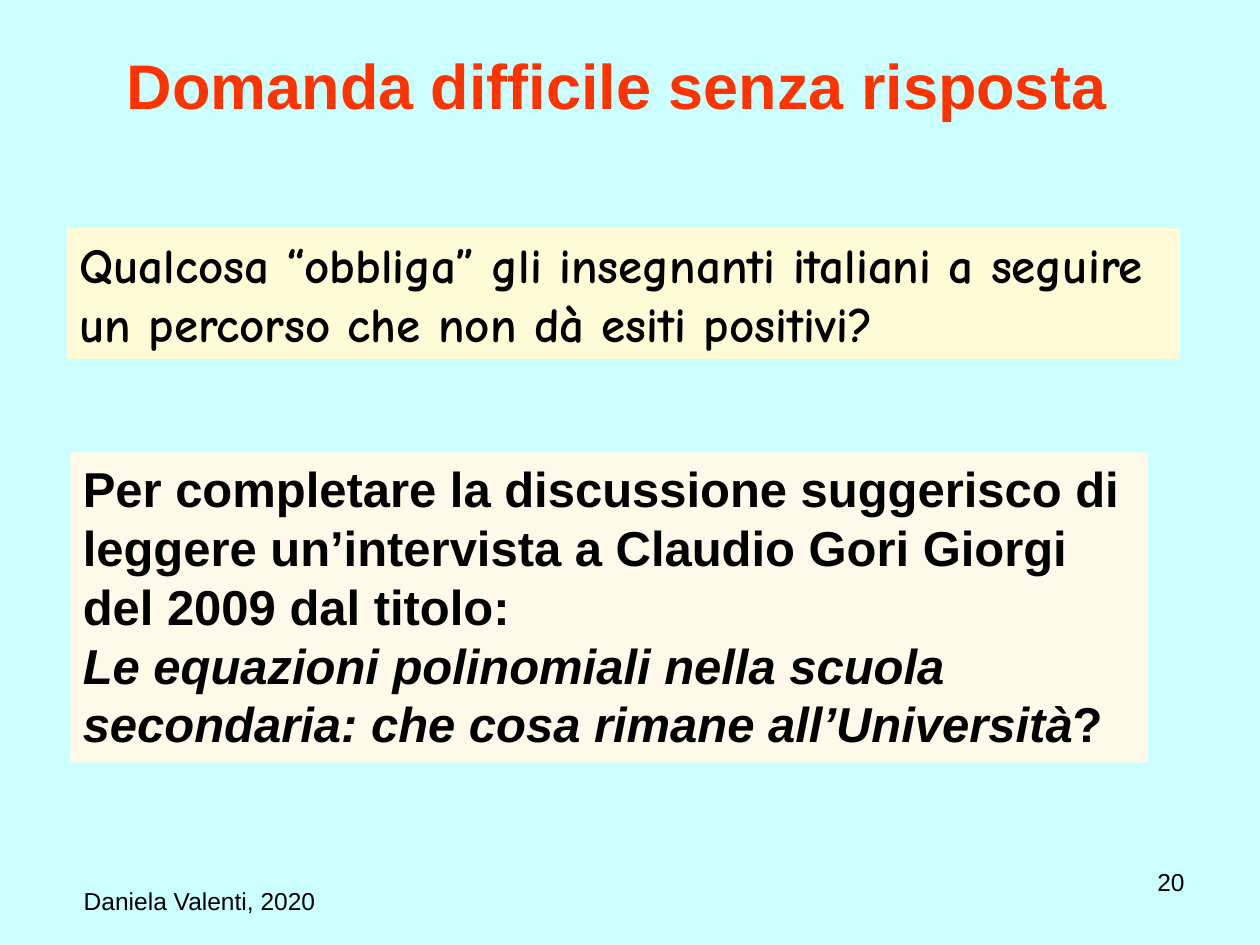
from dataclasses import dataclass

from pptx import Presentation
from pptx.dml.color import RGBColor
from pptx.enum.shapes import MSO_SHAPE
from pptx.enum.text import MSO_ANCHOR, PP_ALIGN
from pptx.util import Cm, Pt


@dataclass(frozen=True)
class Span:
    text: str
    italic: bool = False


@dataclass(frozen=True)
class TextBlock:
    left: float
    top: float
    width: float
    height: float
    paragraphs: tuple[tuple[Span, ...], ...]
    size: int
    font: str = "Arial"
    color: str = "000000"
    bold: bool = False
    align: PP_ALIGN = PP_ALIGN.LEFT
    anchor: MSO_ANCHOR = MSO_ANCHOR.TOP
    fill: str | None = None


BLOCKS = (
    TextBlock(1.07, 0.76, 22.73, 1.9,
              ((Span("Domanda difficile senza risposta"),),),
              size=36, color="FF3300", bold=True,
              align=PP_ALIGN.CENTER, anchor=MSO_ANCHOR.MIDDLE),
    TextBlock(0, 17.73, 8.05, 1.32, ((Span("Daniela Valenti, 2020"),),),
              size=14, align=PP_ALIGN.CENTER),
    TextBlock(18.21, 17.35, 5.92, 1.32, ((Span("20"),),),
              size=14, align=PP_ALIGN.RIGHT),
    TextBlock(1.35, 4.6, 22.43, 2.64,
              ((Span("Qualcosa “obbliga” gli insegnanti italiani a seguire "
                     "un percorso che non dà esiti positivi?"),),),
              size=28, font="Comic Neue", bold=True, fill="FFFBD6"),
    TextBlock(1.42, 9.12, 21.72, 6.25,
              ((Span("Per completare la discussione suggerisco di leggere "
                     "un’intervista a Claudio Gori Giorgi del 2009 dal titolo:"),),
               (Span("Le equazioni polinomiali nella scuola secondaria: "
                     "che cosa rimane all’Università", italic=True),
                Span("?"))),
              size=28, bold=True, fill="FFF9EA"),
)


def paint(fill, color: str) -> None:
    fill.solid()
    fill.fore_color.rgb = RGBColor.from_string(color)


def add_block(page, block: TextBlock) -> None:
    bounds = [Cm(length) for length in (block.left, block.top, block.width, block.height)]
    if block.fill:
        box = page.shapes.add_shape(MSO_SHAPE.RECTANGLE, *bounds)
        box.shadow.inherit = False
        box.line.fill.background()
        paint(box.fill, block.fill)
    else:
        box = page.shapes.add_textbox(*bounds)

    frame = box.text_frame
    frame.word_wrap = True
    frame.vertical_anchor = block.anchor
    for index, spans in enumerate(block.paragraphs):
        para = frame.add_paragraph() if index else frame.paragraphs[0]
        para.alignment = block.align
        para.font.name = block.font
        para.font.size = Pt(block.size)
        para.font.bold = block.bold
        paint(para.font.fill, block.color)
        for span in spans:
            run = para.add_run()
            run.text = span.text
            if span.italic:
                run.font.italic = True


def main() -> None:
    deck = Presentation()
    deck.slide_width, deck.slide_height = Cm(25.4), Cm(19.05)
    page = deck.slides.add_slide(deck.slide_layouts[6])
    paint(page.background.fill, "CCFFFF")
    for block in BLOCKS:
        add_block(page, block)
    deck.save("out.pptx")


if __name__ == "__main__":
    main()
